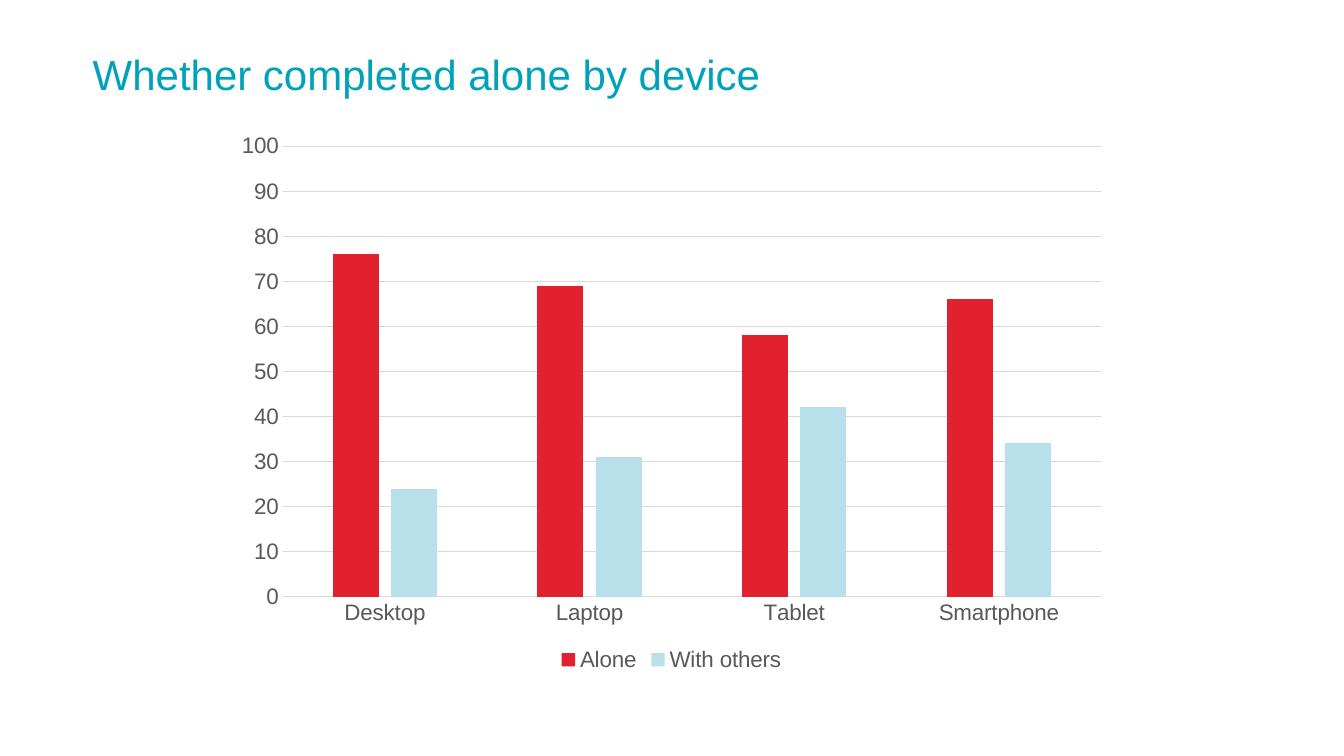
from dataclasses import dataclass

from pptx import Presentation
from pptx import util as u
from pptx.chart import data
from pptx.dml import color
from pptx.enum import chart as charts, text


@dataclass
class Theme:
    font: str = "Arial"
    title_color: str = "00A1BA"
    label_color: str = "595959"
    line_color: str = "D9D9D9"
    alone_color: str = "E2212F"
    others_color: str = "B7E0EB"
    title_size: int = 30
    label_size: int = 16


theme = Theme()


def rgb(value):
    return color.RGBColor.from_string(value)


def add_text(page, words, *, left, top, width, height, size, fill, spacing=1.0):
    box = page.shapes.add_textbox(u.Inches(left), u.Inches(top), u.Inches(width), u.Inches(height))
    frame = box.text_frame
    frame.word_wrap = True
    frame.vertical_anchor = text.MSO_ANCHOR.TOP
    frame.margin_left = frame.margin_right = frame.margin_top = frame.margin_bottom = 0
    para = frame.paragraphs[0]
    para.line_spacing = spacing
    span = para.add_run()
    span.text = words
    span.font.name = theme.font
    span.font.size = u.Pt(size)
    span.font.color.rgb = rgb(fill)


deck = Presentation()
deck.slide_width = u.Inches(13.33)
deck.slide_height = u.Inches(7.5)
page = deck.slides.add_slide(deck.slide_layouts[6])

add_text(page, "Whether completed alone by device", left=0.92, top=0.54, width=11.5, height=0.87,
         size=theme.title_size, fill=theme.title_color, spacing=0.9)

devices = data.CategoryChartData()
devices.categories = ["Desktop", "Laptop", "Tablet", "Smartphone"]
devices.add_series("Alone", [76, 69, 58, 66])
devices.add_series("With others", [24, 31, 42, 34])
chart = page.shapes.add_chart(
    charts.XL_CHART_TYPE.COLUMN_CLUSTERED,
    u.Inches(2.22), u.Inches(1.22), u.Inches(8.88), u.Inches(5.49), devices,
).chart
chart.has_title = False
chart.font.name = theme.font
chart.font.size = u.Pt(theme.label_size)
chart.font.color.rgb = rgb(theme.label_color)

chart.has_legend = True
chart.legend.position = charts.XL_LEGEND_POSITION.BOTTOM
chart.legend.include_in_layout = False

plot = chart.plots[0]
plot.vary_by_categories = False
plot.gap_width = 219
plot.overlap = -27
for series, fill in zip(plot.series, [theme.alone_color, theme.others_color]):
    series.format.fill.solid()
    series.format.fill.fore_color.rgb = rgb(fill)

values = chart.value_axis
values.minimum_scale = 0
values.maximum_scale = 100
values.major_unit = 10
values.has_major_gridlines = True
values.format.line.fill.background()
for axis in (chart.category_axis, values):
    axis.major_tick_mark = axis.minor_tick_mark = charts.XL_TICK_MARK.NONE
for line in (chart.category_axis.format.line, values.major_gridlines.format.line):
    line.color.rgb = rgb(theme.line_color)
    line.width = u.Pt(0.75)

deck.save("out.pptx")
